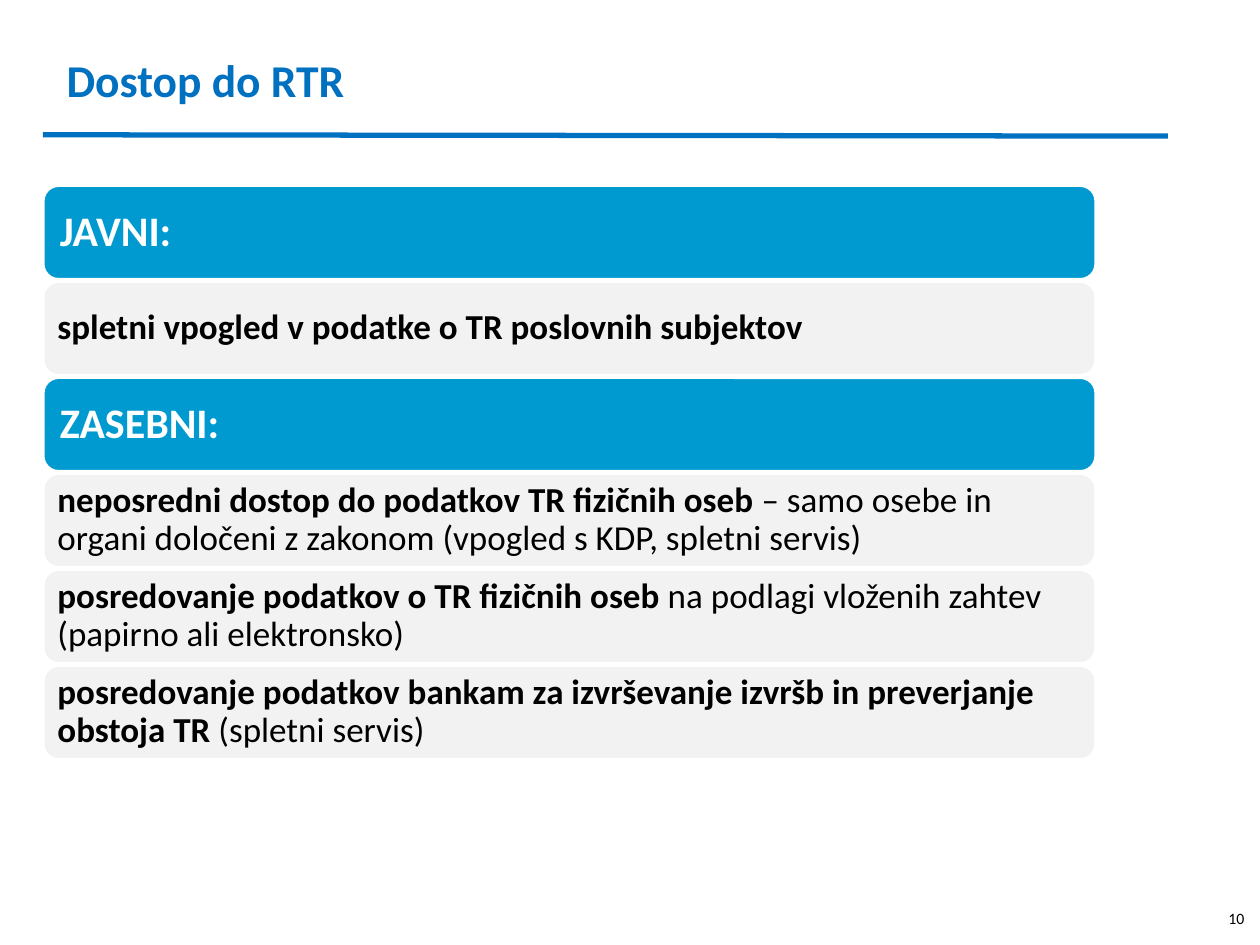
"""Build the slide on public and private access to the RTR register."""
from dataclasses import dataclass

from lxml.etree import SubElement
from pptx import Presentation
from pptx.dml.color import RGBColor as Rgb
from pptx.enum.shapes import MSO_CONNECTOR as Connector, MSO_SHAPE as Shape
from pptx.enum.text import MSO_ANCHOR as Anchor, PP_ALIGN as Align
from pptx.oxml.ns import qn
from pptx.util import Inches, Pt

TITLE = "Dostop do RTR"
PAGE = "10"
ROWS = [
    ("heading", "JAVNI:", ""),
    ("detail", "spletni vpogled v podatke o TR poslovnih subjektov", ""),
    ("heading", "ZASEBNI:", ""),
    ("detail", "neposredni dostop do podatkov TR fizičnih oseb",
     " – samo osebe in organi določeni z zakonom (vpogled s KDP, spletni servis)"),
    ("detail", "posredovanje podatkov o TR fizičnih oseb",
     " na podlagi vloženih zahtev (papirno ali elektronsko)"),
    ("detail", "posredovanje podatkov bankam za izvrševanje izvršb in preverjanje obstoja TR ",
     "(spletni servis)"),
]


@dataclass(frozen=True)
class Theme:
    """Colours, font and type sizes."""
    font: str = "Calibri"
    accent: str = "0070C0"
    white: str = "FFFFFF"
    black: str = "000000"
    title_size: int = 26
    page_size: int = 9
    rule_width: int = 3
    border: int = 2


THEME = Theme()
ROW_STYLES = {
    "heading": dict(fill="009AD0", color=THEME.white, size=24, inset=0.1),
    "detail": dict(fill="F2F2F2", color=THEME.black, size=20, inset=0.08),
}
LEFT, TOP, WIDTH, HEIGHT, PITCH = 0.34, 1.47, 8.36, 0.75, 0.762


def add_run(paragraph, text, size, color, bold):
    """Append one styled run."""
    run = paragraph.add_run()
    run.text = text
    run.font.name = THEME.font
    run.font.size = Pt(size)
    run.font.bold = bold
    run.font.color.rgb = Rgb.from_string(color)


def add_label(slide, box, text, size, color, bold):
    """Add a single-line text box."""
    frame = slide.shapes.add_textbox(*map(Inches, box)).text_frame
    frame.word_wrap = True
    add_run(frame.paragraphs[0], text, size, color, bold)


def add_row(slide, index, kind, strong, plain):
    """Add one rounded row of the list."""
    style = ROW_STYLES[kind]
    box = (LEFT, TOP + index * PITCH, WIDTH, HEIGHT)
    row = slide.shapes.add_shape(Shape.ROUNDED_RECTANGLE, *map(Inches, box))
    row.shadow.inherit = False
    row.fill.solid()
    row.fill.fore_color.rgb = Rgb.from_string(style["fill"])
    row.line.color.rgb = Rgb.from_string(THEME.white)
    row.line.width = Pt(THEME.border)
    frame = row.text_frame
    frame.word_wrap = True
    frame.vertical_anchor = Anchor.MIDDLE
    for side in ("left", "top", "right", "bottom"):
        setattr(frame, f"margin_{side}", Inches(style["inset"]))
    paragraph = frame.paragraphs[0]
    paragraph.alignment = Align.LEFT
    paragraph.line_spacing = 0.9
    for text, bold in ((strong, True), (plain, False)):
        if text:
            add_run(paragraph, text, style["size"], style["color"], bold)


def add_rule(slide):
    """Draw the line under the title."""
    ends = map(Inches, (LEFT, 1.07, 9.27, 1.08))
    rule = slide.shapes.add_connector(Connector.STRAIGHT, *ends)
    rule.line.color.rgb = Rgb.from_string(THEME.accent)
    rule.line.width = Pt(THEME.rule_width)
    SubElement(rule._element.spPr, qn("a:effectLst"))


def main():
    """Assemble and save the slide."""
    deck = Presentation()
    deck.slide_width, deck.slide_height = Inches(10), Inches(7.5)
    slide = deck.slides.add_slide(deck.slide_layouts[6])
    add_label(slide, (0.43, 0.36, 8.5, 0.69), TITLE, THEME.title_size, THEME.accent, True)
    for index, row in enumerate(ROWS):
        add_row(slide, index, *row)
    add_rule(slide)
    add_label(slide, (9.65, 7.16, 0.35, 0.34), PAGE, THEME.page_size, THEME.black, False)
    deck.save("out.pptx")


if __name__ == "__main__":
    main()
